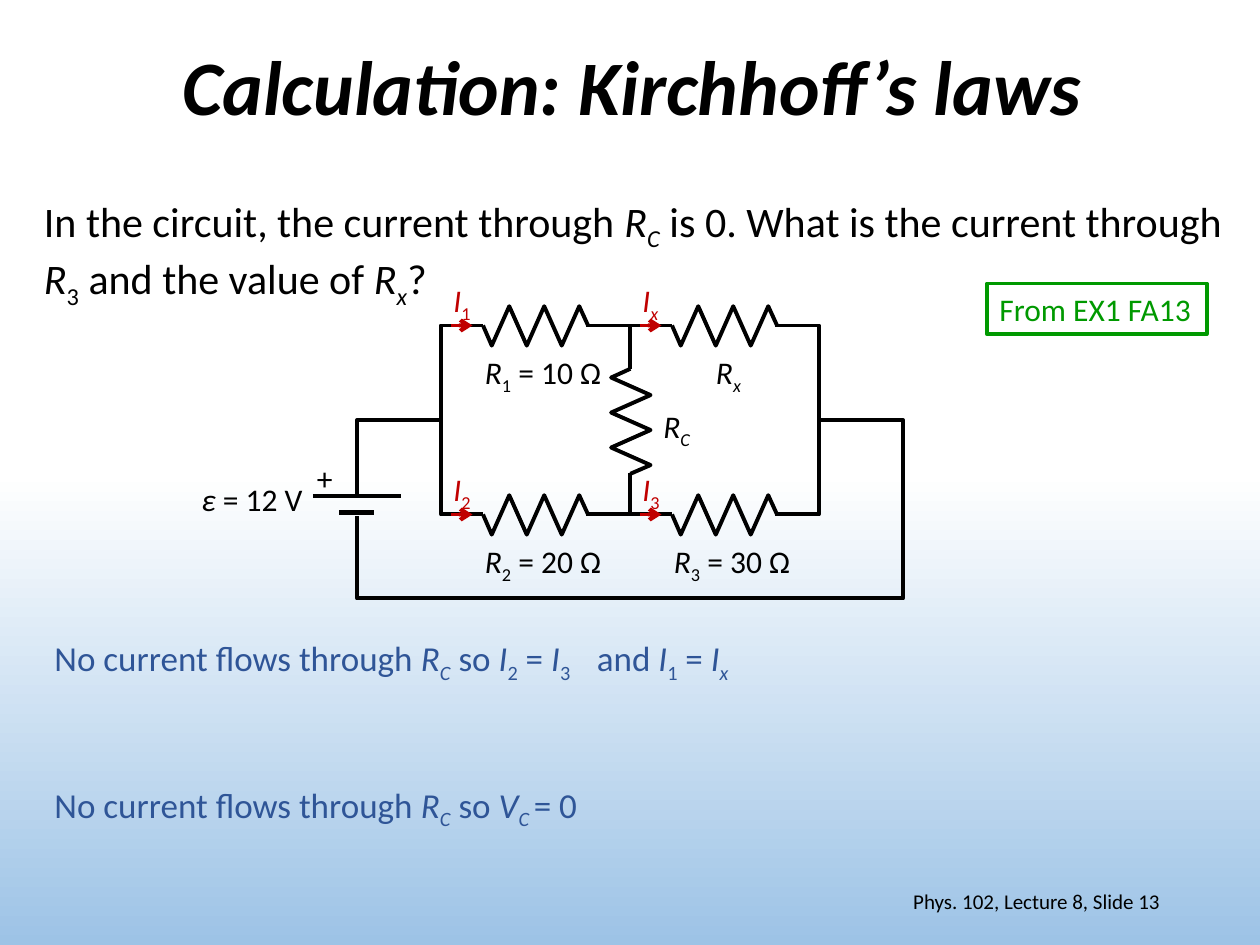
"""Build a slide on Kirchhoff's laws with a bridge circuit."""
from lxml import etree
from pptx import Presentation
from pptx.dml.color import RGBColor
from pptx.enum.shapes import MSO_CONNECTOR, MSO_SHAPE
from pptx.enum.text import MSO_ANCHOR, MSO_AUTO_SIZE, PP_ALIGN
from pptx.oxml.ns import qn
from pptx.util import Pt

RECT = MSO_SHAPE.RECTANGLE
STRAIGHT = MSO_CONNECTOR.STRAIGHT
MIDDLE = MSO_ANCHOR.MIDDLE
GROW = MSO_AUTO_SIZE.SHAPE_TO_FIT_TEXT
CENTER, RIGHT = PP_ALIGN.CENTER, PP_ALIGN.RIGHT
COLORS = {
    name: RGBColor.from_string(value)
    for name, value in {
        "black": "000000", "white": "FFFFFF", "sky": "9DC3E6",
        "green": "009900", "blue": "2F5597", "red": "C00000",
    }.items()
}

prs = Presentation()
prs.slide_width, prs.slide_height = Pt(720), Pt(540)
s = prs.slides.add_slide(prs.slide_layouts[6])
shapes = s.shapes

fill = s.background.fill
fill.gradient()
fill.gradient_angle = 270
for stop, position, color in zip(fill.gradient_stops, (0.5, 1), ("white", "sky")):
    stop.position = position
    stop.color.rgb = COLORS[color]


def add_text(x, y, w, h, size, color, runs, wrap=False):
    """Add a text box; run styles are i for italic and s for subscript."""
    sp = shapes.add_textbox(Pt(x), Pt(y), Pt(w), Pt(h))
    tf = sp.text_frame
    tf.word_wrap = wrap
    tf.auto_size = GROW
    p = tf.paragraphs[0]
    p.font.size = Pt(size)
    p.font.name = "Calibri"
    p.font.color.rgb = COLORS[color]
    for text, style in runs:
        r = p.add_run()
        r.text = text
        if "i" in style:
            r.font.italic = True
        if "s" in style:
            r.font._element.set("baseline", "-25000")
    return sp


def style_line(sp, color="black", width=2.25):
    """Set the outline of a shape or connector."""
    sp.line.color.rgb = COLORS[color]
    sp.line.width = Pt(width)


title = add_text(51, 0, 621, 104, 44, "black", [("Calculation: Kirchhoff’s laws", "")], True)
tf = title.text_frame
tf.auto_size = MSO_AUTO_SIZE.NONE
tf.vertical_anchor = MIDDLE
p = tf.paragraphs[0]
p.alignment = CENTER
p.line_spacing = 0.9
p.font.bold = p.font.italic = True

add_text(18, 108, 702, 65.5, 24, "black", [
    ("In the circuit, the current through ", ""), ("R", "i"), ("C", "is"),
    (" is 0. What is the current through ", ""), ("R", "i"), ("3", "s"),
    (" and the value of ", ""), ("R", "i"), ("x", "is"), ("?", ""),
], True)

outer = shapes.add_shape(RECT, Pt(204), Pt(240), Pt(312), Pt(102))
outer.fill.background()
inner = shapes.add_shape(RECT, Pt(252), Pt(186), Pt(216), Pt(108))
inner._element.set("useBgFill", "1")
for loop in (outer, inner):
    loop.shadow.inherit = False
    style_line(loop)

bridge = shapes.add_connector(STRAIGHT, Pt(360), Pt(186), Pt(360), Pt(294))
bridge.begin_connect(inner, 0)
bridge.end_connect(inner, 2)
style_line(bridge)
wires = [bridge]

gap = shapes.add_shape(RECT, Pt(174), Pt(283), Pt(60), Pt(11.5))
masks = [gap]
for half, y, width in ((25.25, 283.5, 2.25), (10, 293, 3)):
    plate = shapes.add_connector(STRAIGHT, Pt(204 - half), Pt(y), Pt(204 + half), Pt(y))
    style_line(plate, width=width)
    wires.append(plate)

zigzag = [(5 + 10 * i, 0 if i % 2 else 22.5) for i in range(6)] + [(60, 11)]
resistors = [(330.5, 228.5, 270)] + [(x, y, 0) for y in (174, 282) for x in (276, 384)]
for x, y, rotation in resistors:
    mask = shapes.add_shape(RECT, Pt(x), Pt(y), Pt(59), Pt(24))
    masks.append(mask)
    builder = shapes.build_freeform(Pt(x), Pt(y + 12))
    builder.add_line_segments([(Pt(x + dx), Pt(y + 1 + dy)) for dx, dy in zigzag], close=False)
    resistor = builder.convert_to_shape()
    resistor._element.set("useBgFill", "1")
    resistor.shadow.inherit = False
    style_line(resistor)
    mask.rotation = resistor.rotation = rotation

for mask in masks:
    mask._element.set("useBgFill", "1")
    mask.shadow.inherit = False
    mask.line.fill.background()

labels = [
    (174, 259, 24, [("+", "")]),
    (402, 198, 29.5, [("R", "i"), ("x", "is")]),
    (270, 198, 83, [("R", "i"), ("1", "s"), (" = 10 Ω", "")]),
    (372, 229, 30, [("R", "i"), ("C", "is")]),
    (108, 271, 73.5, [("ε ", "i"), ("= 12 V", "")]),
    (270, 306, 83, [("R", "i"), ("2", "s"), (" = 20 Ω", "")]),
    (378, 306, 83, [("R", "i"), ("3", "s"), (" = 30 Ω", "")]),
]
for x, y, w, runs in labels:
    add_text(x, y, w, 29, 18, "black", runs)

source = add_text(564, 162, 125.5, 29, 18, "green", [("From EX1 FA13", "")])
style_line(source, "green")

no_current = [("No current flows through ", ""), ("R", "i"), ("C", "is"), (" so ", "")]
add_text(24, 360, 314, 31.5, 20, "blue", no_current + [
    ("I", "i"), ("2", "s"), (" = ", ""), ("I", "i"), ("3", "s")])
add_text(24, 444, 327.5, 31.5, 20, "blue", no_current + [
    ("V", "i"), ("C ", "is"), ("= 0", "")])
add_text(334, 360, 92, 31.5, 20, "blue", [
    ("and ", ""), ("I", "i"), ("1", "s"), (" = ", ""), ("I", "i"), ("x", "is")])

currents = [(252, 186, "1", "s"), (252, 294, "2", "s"), (360, 186, "x", "is"), (360, 294, "3", "s")]
for x, y, index, style in currents:
    add_text(x, y - 29, 25, 29, 18, "red", [("I", "i"), (index, style)])
    arrow = shapes.add_connector(STRAIGHT, Pt(x + 6), Pt(y), Pt(x + 18), Pt(y))
    style_line(arrow, "red")
    ln = arrow._element.spPr.find(qn("a:ln"))
    etree.SubElement(ln, qn("a:tailEnd"), type="arrow")
    wires.append(arrow)

for wire in wires:
    etree.SubElement(wire._element.spPr, qn("a:effectLst"))

footer = add_text(508, 500.5, 162, 29, 12, "black", [("Phys. 102, Lecture 8, Slide 13", "")], True)
tf = footer.text_frame
tf.auto_size = MSO_AUTO_SIZE.NONE
tf.vertical_anchor = MIDDLE
tf.paragraphs[0].alignment = RIGHT

prs.save("out.pptx")
